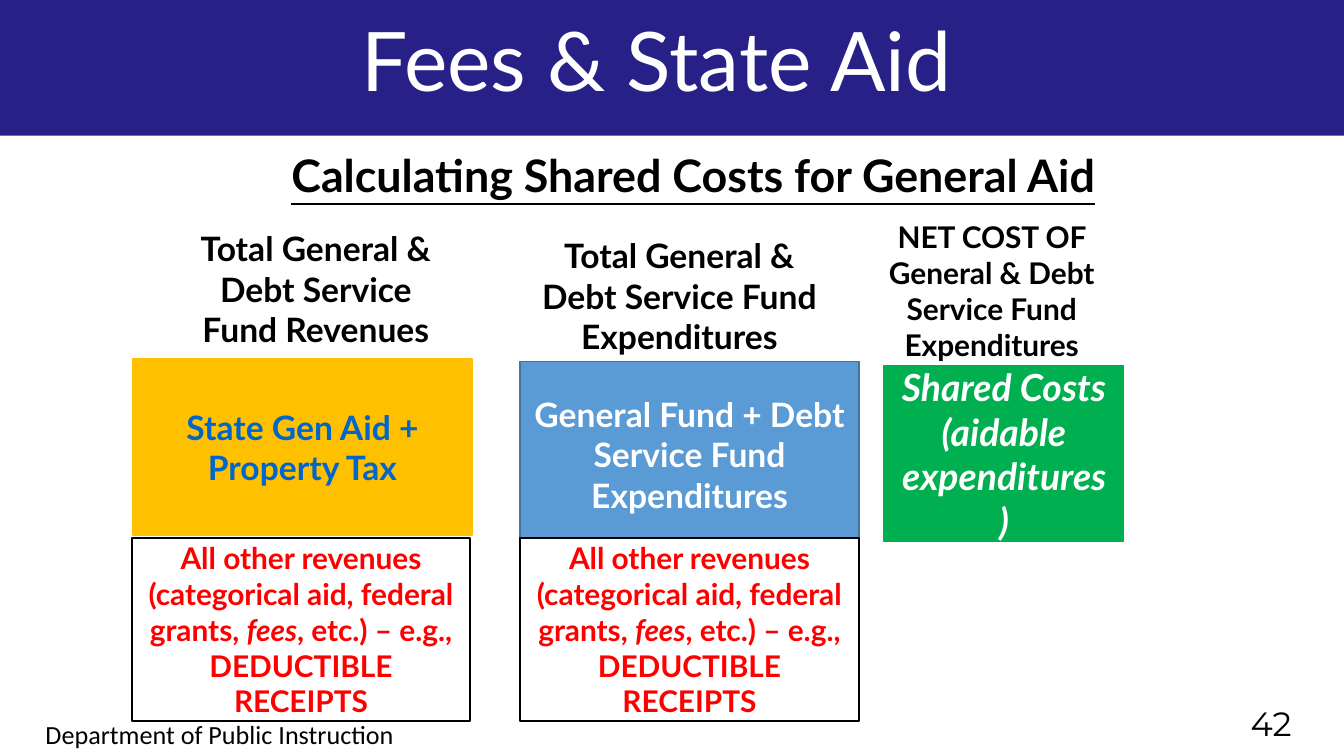
from pptx import Presentation
from pptx.dml.color import RGBColor
from pptx.enum.shapes import MSO_SHAPE
from pptx.enum.text import MSO_ANCHOR, PP_ALIGN
from pptx.util import Inches, Pt

RECTANGLE = MSO_SHAPE.RECTANGLE
LEFT, CENTER, RIGHT = PP_ALIGN.LEFT, PP_ALIGN.CENTER, PP_ALIGN.RIGHT
TOP, MIDDLE = MSO_ANCHOR.TOP, MSO_ANCHOR.MIDDLE
COLUMNS, ROWS = 100, 56.25
COLORS = {
    "navy": "262087", "white": "FFFFFF", "black": "000000", "red": "FF0000",
    "gold": "FFC000", "link": "0066CC", "blue": "5B9BD5", "edge": "43739E",
    "green": "00B050",
}


def rgb(name):
    return RGBColor.from_string(COLORS[name])


def write(frame, text, size=18, color="black", font="Lato", bold=True, italic=False,
          underline=False, align=CENTER, anchor=TOP, after=None, spacing=None):
    frame.word_wrap = True
    frame.vertical_anchor = anchor
    paragraph = frame.paragraphs[0]
    paragraph.alignment = align
    if after is not None:
        paragraph.space_after = Pt(after)
    if spacing is not None:
        paragraph.line_spacing = spacing
    for index, part in enumerate(text.split("*")):
        run = paragraph.add_run()
        run.text = part
        run.font.name = font
        run.font.size = Pt(size)
        run.font.bold = bold
        run.font.italic = italic or index % 2 == 1
        run.font.underline = underline
        run.font.color.rgb = rgb(color)


class AidSlide:
    def __init__(self, deck):
        self.column = deck.slide_width / COLUMNS
        self.row = deck.slide_height / ROWS
        self.slide = deck.slides.add_slide(deck.slide_layouts[6])

    def place(self, left, top, width, height):
        return (round(left * self.column), round(top * self.row),
                round(width * self.column), round(height * self.row))

    def label(self, area, text, **style):
        box = self.slide.shapes.add_textbox(*self.place(*area))
        write(box.text_frame, text, **style)

    def block(self, area, fill, line=None, text=None, **style):
        box = self.slide.shapes.add_shape(RECTANGLE, *self.place(*area))
        box.shadow.inherit = False
        box.fill.solid()
        box.fill.fore_color.rgb = rgb(fill)
        if line:
            box.line.color.rgb = rgb(line)
            box.line.width = Pt(1)
        else:
            box.line.fill.background()
        if text:
            write(box.text_frame, text, anchor=MIDDLE, **style)


def main():
    deck = Presentation()
    deck.slide_width = Inches(10)
    deck.slide_height = deck.slide_width * 9 // 16
    page = AidSlide(deck)

    page.block((-0.1, 0, 100.1, 10.1), "navy")
    page.label((20.7, 10.5, 65.6, 5), "Calculating Shared Costs for General Aid",
               size=24, underline=True, align=LEFT, after=9)
    page.label((-1.2, 0.1, 100.1, 9.4), "Fees & State Aid", size=44, color="white",
               bold=False, anchor=MIDDLE, spacing=0.9)

    headings = [
        ((13.4, 16.5, 20.2, 10.1), "Total General & Debt Service Fund Revenues", 18),
        ((39.3, 17, 22.5, 10.1), "Total General & Debt Service Fund Expenditures", 18),
        ((64.6, 15.8, 18.4, 11.8),
         "NET COST OF General & Debt Service Fund Expenditures", 16),
    ]
    for area, heading, size in headings:
        page.label(area, heading, size=size)

    page.block((9.9, 26.7, 25.2, 13.1), "gold", "gold",
               "State Gen Aid + Property Tax", color="link")
    page.block((38.7, 26.9, 25.2, 13.8), "blue", "edge",
               "General Fund + Debt Service Fund Expenditures", color="white")
    page.block((65.8, 27.2, 17.8, 13.1), "green", "green",
               "Shared Costs (aidable expenditures)", size=20, color="white", italic=True)

    receipts = ("All other revenues (categorical aid, federal grants, *fees*, etc.)"
                " – e.g., DEDUCTIBLE RECEIPTS")
    for left in (9.8, 38.7):
        page.block((left, 40, 25.2, 13.65), "white", "black", receipts,
                   size=16, color="red")

    page.label((2.4, 53, 36.7, 3), "Department of Public Instruction", size=14,
               font="Calibri", bold=False, align=LEFT)
    page.label((88.8, 51.8, 8.3, 3), "42", font="Montserrat", bold=False, align=RIGHT)

    deck.save("out.pptx")


if __name__ == "__main__":
    main()
